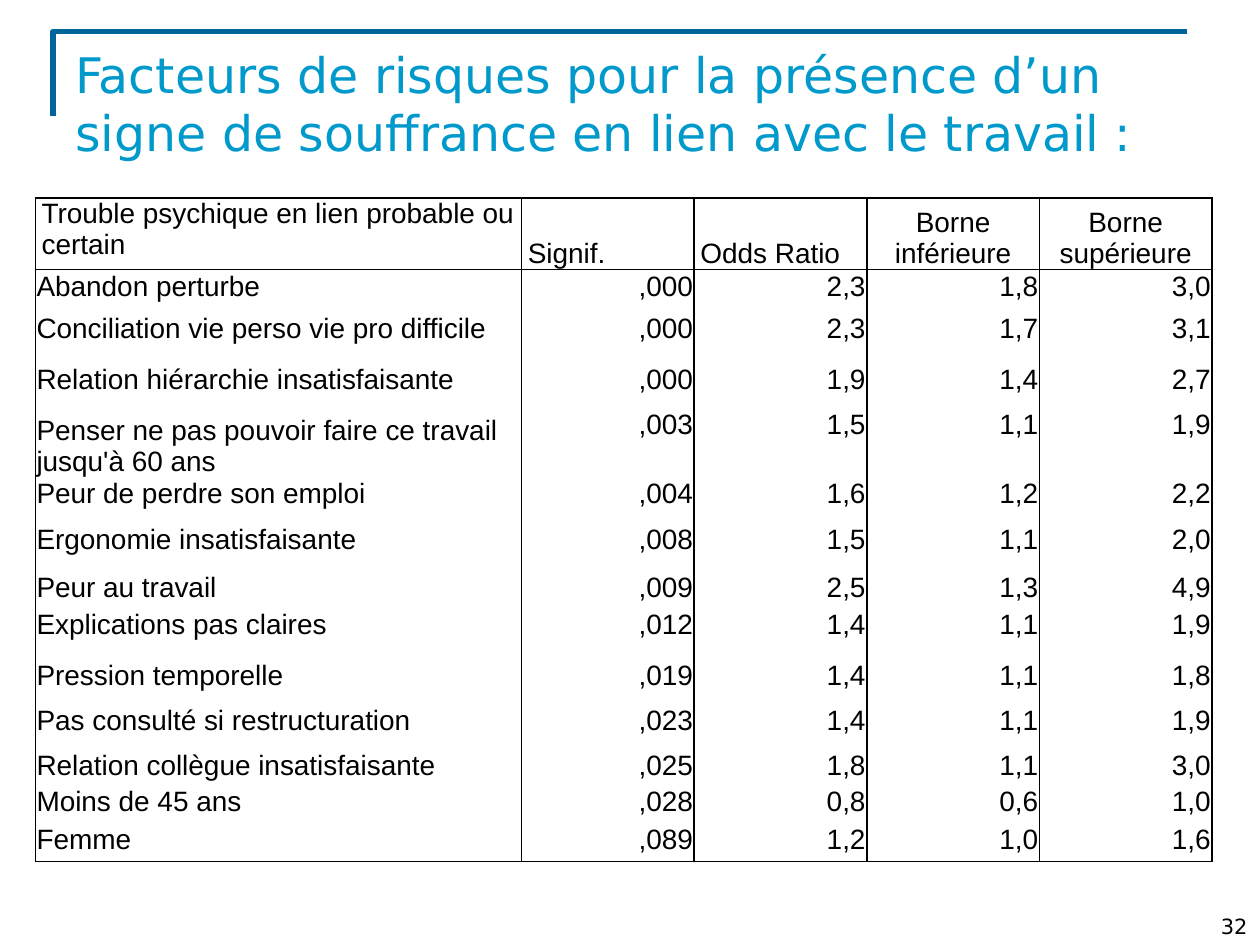
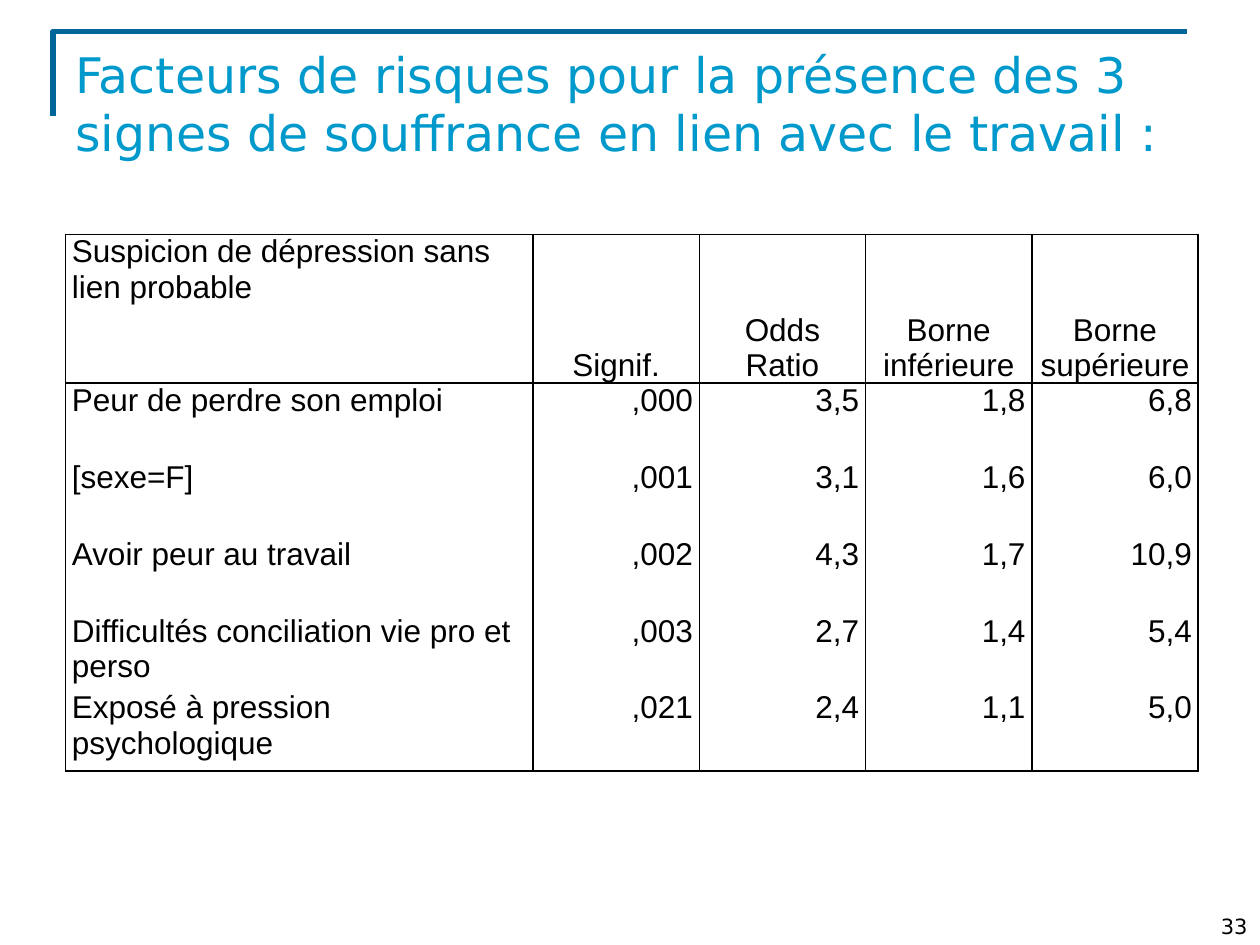
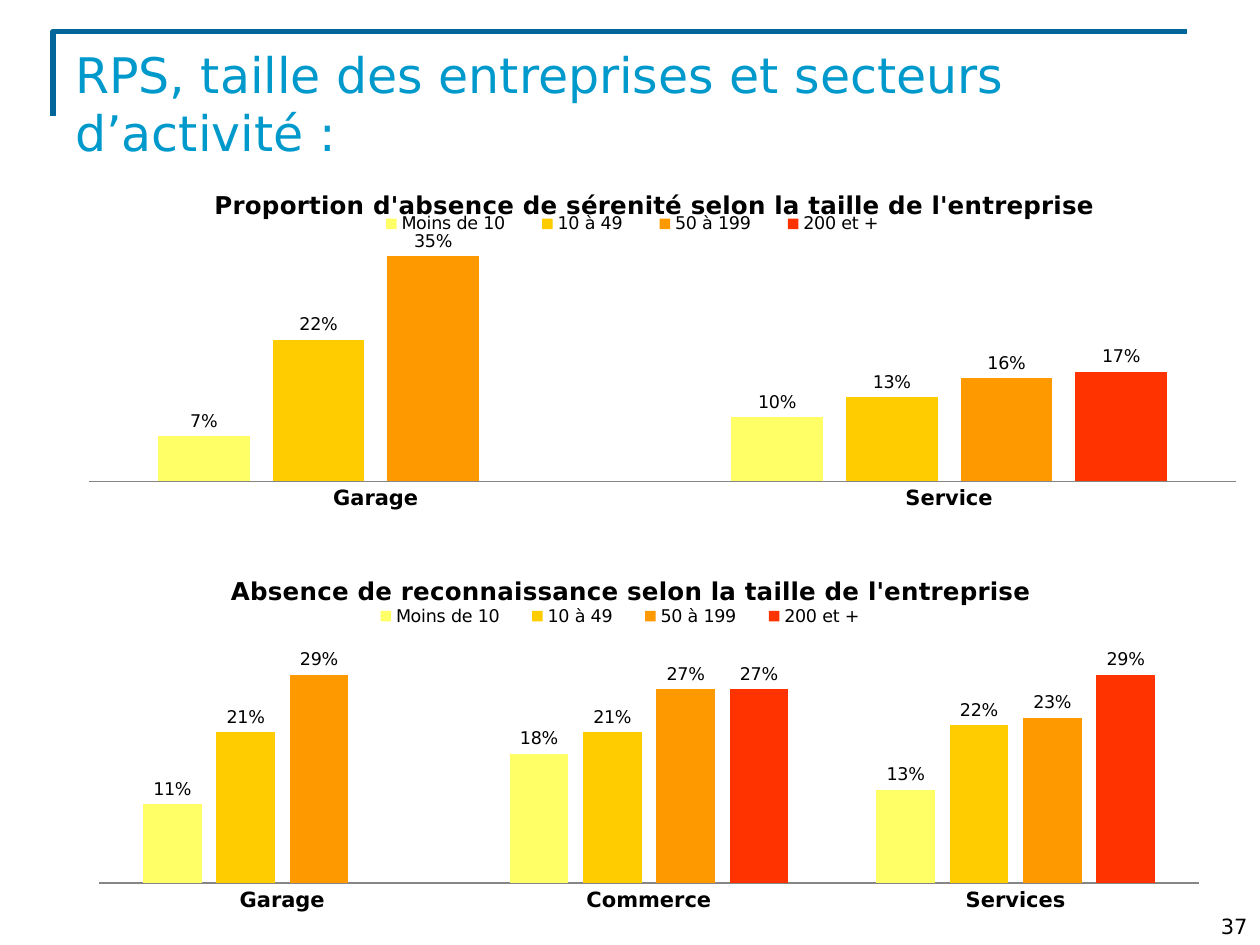
"""Build three slides on psychosocial risk factors: two tables and a pair of charts."""
from dataclasses import dataclass
from typing import NamedTuple

from pptx import Presentation
from pptx import oxml
from pptx import slide as slides
from pptx import util as u
from pptx.chart import chart as charts
from pptx.chart import data as chart_data
from pptx.dml import color as dml
from pptx.enum import chart as chart_enum
from pptx.enum import text as text_enum
from pptx.oxml import ns
from pptx.text import text as texts

COLOURS = {
    "band": "006699",
    "title": "0099CC",
    "ink": "000000",
    "axis": "868686",
    "Moins de 10": "FFFF66",
    "10 à 49": "FFCC00",
    "50 à 199": "FF9900",
    "200 et +": "FF3300",
}
TITLE_FONT = "DejaVu Sans"
TABLE_FONT = "Arial"
ALIGN = text_enum.PP_ALIGN
ANCHOR = text_enum.MSO_ANCHOR


class Box(NamedTuple):
    """Left, top, width and height."""
    left: float
    top: float
    width: float
    height: float

    def inches(self) -> list[u.Inches]:
        """Return the four lengths in slide units."""
        return [u.Inches(value) for value in self]


@dataclass
class RiskTable:
    """A table of odds ratios with its measures."""
    left: float
    top: float
    label_width: float
    value_width: float
    heights: list[float]
    size: int
    margins: tuple[float, float]
    first_centred: int
    header: list[str]
    rows: list[list[str]]
    low_row: int = 0


@dataclass
class SizeChart:
    """A column chart by company size, with layouts as fractions of the chart."""
    box: Box
    title: str
    title_at: tuple[float, float]
    legend: Box
    plot: Box
    maximum: float
    axis_width: float
    categories: list[str]
    series: dict[str, list[float | None]]


def colour(name: str) -> dml.RGBColor:
    """Look up a named colour."""
    return dml.RGBColor.from_string(COLOURS[name])


def style_font(font: texts.Font, size: float, name: str = TITLE_FONT,
               ink: str = "ink", bold: bool = False) -> None:
    """Set the format of a font."""
    font.name, font.size, font.bold = name, u.Pt(size), bold
    font.color.rgb = colour(ink)


def write(frame: texts.TextFrame, content: str, *, size: float, name: str = TITLE_FONT,
          ink: str = "ink", bold: bool = False, align: ALIGN = ALIGN.LEFT) -> None:
    """Write one formatted paragraph into a text frame."""
    paragraph = frame.paragraphs[0]
    paragraph.alignment = align
    run = paragraph.add_run()
    run.text = content
    style_font(run.font, size, name, ink, bold)


def add_text(slide: slides.Slide, box: Box, content: str, *,
             anchor: ANCHOR = ANCHOR.TOP, **text_format) -> None:
    """Add a wrapped text box."""
    frame = slide.shapes.add_textbox(*box.inches()).text_frame
    frame.word_wrap, frame.vertical_anchor = True, anchor
    write(frame, content, **text_format)


def add_slide(presentation: Presentation, title: str) -> slides.Slide:
    """Add a slide with its corner band and title."""
    slide = presentation.slides.add_slide(presentation.slide_layouts[6])
    left, top = u.Inches(0.42), u.Inches(0.25)
    builder = slide.shapes.build_freeform(left, u.Inches(0.92))
    builder.add_line_segments([(left, top), (u.Inches(9.42), top)], close=False)
    band = builder.convert_to_shape()
    band.shadow.inherit = False
    band.fill.background()
    band.line.color.rgb, band.line.width = colour("band"), u.Pt(3)
    add_text(slide, Box(0.5, 0.3, 9, 1.25), title, size=28, ink="title")
    return slide


def add_page_number(slide: slides.Slide, number: int) -> None:
    """Add the page number in the bottom right corner."""
    add_text(slide, Box(7.67, 7, 2.33, 0.5), str(number), size=12,
             anchor=ANCHOR.BOTTOM, align=ALIGN.RIGHT)


def set_borders(cell, sides: str) -> None:
    """Draw the given sides of a cell and clear the others."""
    properties = cell._tc.get_or_add_tcPr()
    for side in "LRTB":
        fill = (f'<a:solidFill><a:srgbClr val="{COLOURS["ink"]}"/></a:solidFill>'
                if side in sides else "<a:noFill/>")
        properties.append(oxml.parse_xml(
            f'<a:ln{side} {ns.nsdecls("a")} w="{u.Pt(1)}">{fill}</a:ln{side}>'))


def add_risk_table(slide: slides.Slide, risk: RiskTable) -> None:
    """Add a table with a header row and outlined columns."""
    rows = [risk.header, *risk.rows]
    widths = [risk.label_width] + [risk.value_width] * (len(risk.header) - 1)
    box = Box(risk.left, risk.top, sum(widths), sum(risk.heights))
    table = slide.shapes.add_table(len(rows), len(widths), *box.inches()).table
    table.first_row = table.horz_banding = False
    for column, width in zip(table.columns, widths):
        column.width = u.Inches(width)
    for row_index, (row, height) in enumerate(zip(rows, risk.heights)):
        table.rows[row_index].height = u.Inches(height)
        is_header = row_index == 0
        side, above = (0.05, 0) if is_header else risk.margins
        borders = "LR" + "T" * (row_index < 2) + "B" * (row_index in (0, len(rows) - 1))
        for column_index, content in enumerate(row):
            cell = table.cell(row_index, column_index)
            cell.margin_left = cell.margin_right = u.Inches(side)
            cell.margin_top, cell.margin_bottom = u.Inches(above), 0
            is_label = column_index == 0
            is_low = is_header != is_label if is_header else is_label and row_index == risk.low_row
            cell.vertical_anchor = ANCHOR.BOTTOM if is_low else ANCHOR.TOP
            if is_header:
                align = ALIGN.CENTER if column_index >= risk.first_centred else ALIGN.LEFT
            else:
                align = ALIGN.LEFT if is_label else ALIGN.RIGHT
            write(cell.text_frame, content, size=risk.size, name=TABLE_FONT, align=align)
            set_borders(cell, borders)
            cell.fill.background()


def place(element, index: int, target: str = "", **lengths: float) -> None:
    """Give a chart part a manual layout."""
    for old in element.findall(ns.qn("c:layout")):
        element.remove(old)
    modes = "".join(f'<c:{key}Mode val="edge"/>' for key in "xy")
    values = "".join(f'<c:{key} val="{value}"/>' for key, value in lengths.items())
    element.insert(index, oxml.parse_xml(
        f'<c:layout {ns.nsdecls("c")}><c:manualLayout>{target}{modes}{values}'
        "</c:manualLayout></c:layout>"))


def style_axes(chart: charts.Chart, maximum: float, line_width: float) -> None:
    """Show only the category axis, without tick marks."""
    axis = chart.category_axis
    axis.major_tick_mark = axis.minor_tick_mark = chart_enum.XL_TICK_MARK.NONE
    style_font(axis.tick_labels.font, 12, bold=True)
    axis.format.line.color.rgb = colour("axis")
    axis.format.line.width = u.Pt(line_width)
    values = chart.value_axis
    values.minimum_scale, values.maximum_scale = 0, maximum
    values.has_major_gridlines = values.visible = False


def add_size_chart(slide: slides.Slide, size_chart: SizeChart) -> None:
    """Add a column chart with one series per company size."""
    data = chart_data.CategoryChartData(number_format="0%")
    data.categories = size_chart.categories
    for name, values in size_chart.series.items():
        data.add_series(name, values)
    chart = slide.shapes.add_chart(chart_enum.XL_CHART_TYPE.COLUMN_CLUSTERED,
                                   *size_chart.box.inches(), data).chart
    style_font(chart.font, 10)
    write(chart.chart_title.text_frame, size_chart.title, size=14, bold=True,
          align=ALIGN.CENTER)
    chart.has_legend = True
    chart.legend.position = chart_enum.XL_LEGEND_POSITION.TOP
    chart.legend.include_in_layout = False
    style_axes(chart, size_chart.maximum, size_chart.axis_width)
    plot = chart.plots[0]
    plot.overlap, plot.gap_width, plot.vary_by_categories = -25, 150, False
    for series in plot.series:
        series.format.fill.solid()
        series.format.fill.fore_color.rgb = colour(series.name)
        series.invert_if_negative = False
        labels = series.data_labels
        labels.show_value = True
        labels.number_format, labels.number_format_is_linked = "0%", False
        labels.position = chart_enum.XL_LABEL_POSITION.OUTSIDE_END
    place(chart.chart_title._element, 1, **dict(zip("xy", size_chart.title_at)))
    place(chart.legend._element, 1, **dict(zip("xywh", size_chart.legend)))
    place(chart._chartSpace.chart.plotArea, 0, '<c:layoutTarget val="inner"/>',
          **dict(zip("xywh", size_chart.plot)))


PRESENCE = RiskTable(
    0.28, 1.57, 3.86, 1.37,
    [0.57, 0.34, 0.4, 0.36, 0.55, 0.36, 0.38, 0.3, 0.4, 0.36, 0.36, 0.28, 0.3, 0.31],
    size=16, margins=(0.01, 0.01), first_centred=3, low_row=4,
    header=["Trouble psychique en lien probable ou certain", "Signif.", "Odds Ratio",
            "Borne inférieure", "Borne supérieure"],
    rows=[
        ["Abandon perturbe", ",000", "2,3", "1,8", "3,0"],
        ["Conciliation vie perso vie pro difficile", ",000", "2,3", "1,7", "3,1"],
        ["Relation hiérarchie insatisfaisante", ",000", "1,9", "1,4", "2,7"],
        ["Penser ne pas pouvoir faire ce travail jusqu'à 60 ans", ",003", "1,5", "1,1", "1,9"],
        ["Peur de perdre son emploi", ",004", "1,6", "1,2", "2,2"],
        ["Ergonomie insatisfaisante", ",008", "1,5", "1,1", "2,0"],
        ["Peur au travail", ",009", "2,5", "1,3", "4,9"],
        ["Explications pas claires", ",012", "1,4", "1,1", "1,9"],
        ["Pression temporelle", ",019", "1,4", "1,1", "1,8"],
        ["Pas consulté si restructuration", ",023", "1,4", "1,1", "1,9"],
        ["Relation collègue insatisfaisante", ",025", "1,8", "1,1", "3,0"],
        ["Moins de 45 ans", ",028", "0,8", "0,6", "1,0"],
        ["Femme", ",089", "1,2", "1,0", "1,6"],
    ])

THREE_SIGNS = RiskTable(
    0.52, 1.86, 3.71, 1.32, [1.18, 0.61, 0.61, 0.61, 0.61, 0.64],
    size=18, margins=(0.05, 0), first_centred=1,
    header=["Suspicion de dépression sans lien probable", "Signif.", "Odds Ratio",
            "Borne inférieure", "Borne supérieure"],
    rows=[
        ["Peur de perdre son emploi", ",000", "3,5", "1,8", "6,8"],
        ["[sexe=F]", ",001", "3,1", "1,6", "6,0"],
        ["Avoir peur au travail", ",002", "4,3", "1,7", "10,9"],
        ["Difficultés conciliation vie pro et perso", ",003", "2,7", "1,4", "5,4"],
        ["Exposé à pression psychologique", ",021", "2,4", "1,1", "5,0"],
    ])

SIZE_CHARTS = [
    SizeChart(
        Box(0.42, 1.28, 9.58, 2.92),
        "Proportion d'absence de sérenité selon la taille de l'entreprise",
        (0.13, 0.06), Box(0.25, 0.14, 0.46, 0.06), Box(0.03, 0.17, 0.95, 0.7),
        maximum=0.4, axis_width=0.75, categories=["Garage", "Service"],
        series={"Moins de 10": [0.07, 0.1], "10 à 49": [0.22, 0.13],
                "50 à 199": [0.35, 0.16], "200 et +": [None, 0.17]}),
    SizeChart(
        Box(0.51, 4.43, 9.19, 3.07),
        "Absence de reconnaissance selon la taille de l'entreprise",
        (0.14, 0.03), Box(0.25, 0.12, 0.46, 0.06), Box(0.03, 0.19, 0.95, 0.65),
        maximum=0.35, axis_width=1.5, categories=["Garage", "Commerce", "Services"],
        series={"Moins de 10": [0.11, 0.18, 0.13], "10 à 49": [0.21, 0.21, 0.22],
                "50 à 199": [0.29, 0.27, 0.23], "200 et +": [None, 0.27, 0.29]}),
]


def main() -> None:
    """Build the presentation and save it."""
    presentation = Presentation()
    presentation.slide_width, presentation.slide_height = u.Inches(10), u.Inches(7.5)
    risk_slides = [
        ("Facteurs de risques pour la présence d’un signe de souffrance en lien avec le travail :",
         PRESENCE, 32),
        ("Facteurs de risques pour la présence des 3 signes de souffrance en lien avec le travail :",
         THREE_SIGNS, 33),
    ]
    for title, risk, number in risk_slides:
        slide = add_slide(presentation, title)
        add_risk_table(slide, risk)
        add_page_number(slide, number)
    slide = add_slide(presentation, "RPS, taille des entreprises et secteurs d’activité :")
    for size_chart in SIZE_CHARTS:
        add_size_chart(slide, size_chart)
    add_page_number(slide, 37)
    presentation.save("out.pptx")


if __name__ == "__main__":
    main()
